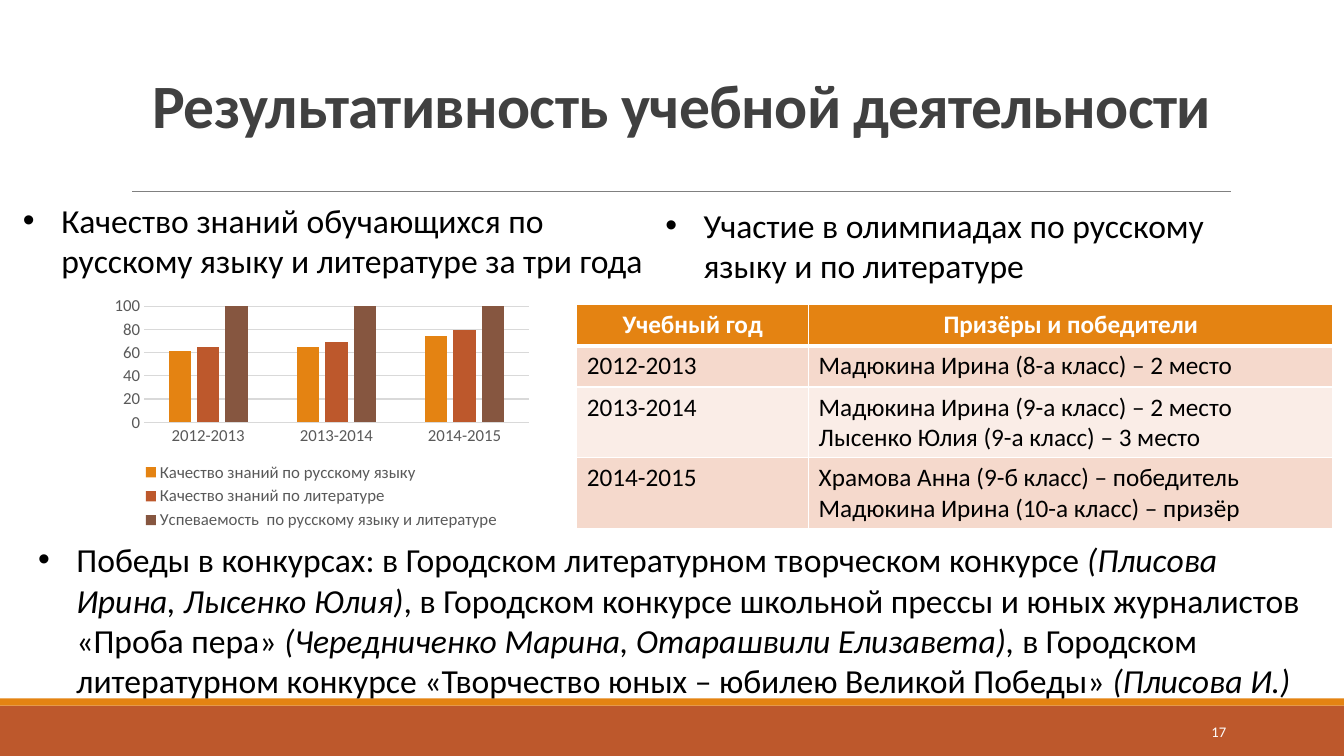
from dataclasses import dataclass

from lxml import etree
from pptx import Presentation
from pptx import util as u
from pptx.chart import data as chart_data
from pptx.dml.color import RGBColor
from pptx.enum import chart as charts, shapes, text
from pptx.oxml import ns

PX = 9144
FONT = "Calibri"
WHITE = RGBColor(0xFF, 0xFF, 0xFF)
BLACK = RGBColor(0x00, 0x00, 0x00)
TITLE_GRAY = RGBColor(0x40, 0x40, 0x40)
LABEL_GRAY = RGBColor(0x59, 0x59, 0x59)
RULE_GRAY = RGBColor(0x80, 0x80, 0x80)
GRID_GRAY = RGBColor(0xD9, 0xD9, 0xD9)
ORANGE = RGBColor(0xE4, 0x83, 0x12)
RUST = RGBColor(0xBD, 0x58, 0x2C)
BROWN = RGBColor(0x86, 0x56, 0x40)
PEACH = RGBColor(0xF5, 0xD9, 0xCC)
PALE_PEACH = RGBColor(0xFA, 0xED, 0xE7)


@dataclass(frozen=True)
class Frame:
    left: int
    top: int
    width: int
    height: int

    def emu(self) -> tuple[int, ...]:
        return tuple(side * PX for side in (self.left, self.top, self.width, self.height))


@dataclass(frozen=True)
class Band:
    frame: Frame
    color: RGBColor


@dataclass(frozen=True)
class Span:
    words: str
    italic: bool = False


@dataclass(frozen=True)
class Bullet:
    frame: Frame
    spans: tuple[Span, ...]


@dataclass(frozen=True)
class Series:
    name: str
    values: tuple[int, ...]
    color: RGBColor


@dataclass(frozen=True)
class Row:
    cells: tuple[str, str]
    height: int
    fill: RGBColor


BANDS = (
    Band(Frame(0, 700, 1333, 50), RUST),
    Band(Frame(0, 693, 1333, 7), ORANGE),
)
BULLETS = (
    Bullet(Frame(13, 193, 663, 91), (
        Span("Качество знаний обучающихся по русскому языку и литературе за три года"),
    )),
    Bullet(Frame(650, 198, 590, 91), (
        Span("Участие в олимпиадах по русскому языку и по литературе"),
    )),
    Bullet(Frame(28, 530, 1287, 172), (
        Span("Победы в конкурсах: в Городском литературном творческом конкурсе "),
        Span("(Плисова Ирина, Лысенко Юлия)", True),
        Span(", в Городском конкурсе школьной прессы и юных журналистов «Проба пера» "),
        Span("(Чередниченко Марина, Отарашвили Елизавета), ", True),
        Span("в Городском литературном конкурсе «Творчество юных – юбилею Великой Победы» "),
        Span("(Плисова И.)", True),
    )),
)
YEARS = ("2012-2013", "2013-2014", "2014-2015")
SERIES = (
    Series("Качество знаний по русскому языку", (61, 65, 74), ORANGE),
    Series("Качество знаний по литературе", (65, 69, 79), RUST),
    Series("Успеваемость  по русскому языку и литературе", (100, 100, 100), BROWN),
)
COLUMN_WIDTHS = (230, 520)
ROWS = (
    Row(("Учебный год", "Призёры и победители"), 41, ORANGE),
    Row((YEARS[0], "Мадюкина Ирина (8-а класс) – 2 место"), 41, PEACH),
    Row((YEARS[1], "Мадюкина Ирина (9-а класс) – 2 место\nЛысенко Юлия (9-а класс) – 3 место"),
        70, PALE_PEACH),
    Row((YEARS[2], "Храмова Анна (9-б класс) – победитель\nМадюкина Ирина (10-а класс) – призёр"),
        70, PEACH),
)


def style_font(font, size: float, color: RGBColor, bold: bool = False, italic: bool = False) -> None:
    font.name = FONT
    font.size = u.Pt(size)
    font.color.rgb = color
    font.bold = bold
    font.italic = italic


def add_band(page, band: Band) -> None:
    bar = page.shapes.add_shape(shapes.MSO_SHAPE.RECTANGLE, *band.frame.emu())
    bar.shadow.inherit = False
    bar.fill.solid()
    bar.fill.fore_color.rgb = band.color
    bar.line.fill.background()


def add_rule(page, left: int, right: int, top: int) -> None:
    rule = page.shapes.add_connector(
        shapes.MSO_CONNECTOR.STRAIGHT, left * PX, top * PX, right * PX, top * PX)
    rule.line.color.rgb = RULE_GRAY
    rule.line.width = u.Pt(0.5)
    etree.SubElement(rule._element.spPr, ns.qn("a:effectLst"))


def add_label(page, frame: Frame, words: str, anchor, align):
    box = page.shapes.add_textbox(*frame.emu())
    box.text_frame.word_wrap = True
    box.text_frame.vertical_anchor = anchor
    box.text_frame.text = words
    para = box.text_frame.paragraphs[0]
    para.alignment = align
    return para


def add_bullet(page, bullet: Bullet) -> None:
    box = page.shapes.add_textbox(*bullet.frame.emu())
    box.text_frame.word_wrap = True
    box.text_frame.auto_size = text.MSO_AUTO_SIZE.SHAPE_TO_FIT_TEXT
    para = box.text_frame.paragraphs[0]
    properties = para._p.get_or_add_pPr()
    properties.set("marL", str(38 * PX))
    properties.set("indent", str(-38 * PX))
    etree.SubElement(properties, ns.qn("a:buFont"), typeface="Arial")
    etree.SubElement(properties, ns.qn("a:buChar"), char="•")
    for span in bullet.spans:
        run = para.add_run()
        run.text = span.words
        style_font(run.font, 24, BLACK, italic=span.italic)


def add_borders(cell, bottom: int) -> None:
    properties = cell._tc.get_or_add_tcPr()
    for place, (side, points) in enumerate((("L", 1), ("R", 1), ("T", 1), ("B", bottom))):
        border = etree.Element(ns.qn(f"a:ln{side}"), w=str(u.Pt(points)))
        fill = etree.SubElement(border, ns.qn("a:solidFill"))
        etree.SubElement(fill, ns.qn("a:srgbClr"), val=str(WHITE))
        properties.insert(place, border)


def add_winners(page, frame: Frame) -> None:
    table = page.shapes.add_table(len(ROWS), len(COLUMN_WIDTHS), *frame.emu()).table
    for column, width in zip(table.columns, COLUMN_WIDTHS):
        column.width = width * PX
    for index, row in enumerate(ROWS):
        header = index == 0
        table.rows[index].height = row.height * PX
        for cell, words in zip(table.rows[index].cells, row.cells):
            cell.text_frame.text = words
            cell.fill.solid()
            cell.fill.fore_color.rgb = row.fill
            add_borders(cell, 3 if header else 1)
            for para in cell.text_frame.paragraphs:
                para.alignment = text.PP_ALIGN.CENTER if header else text.PP_ALIGN.LEFT
                style_font(para.runs[0].font, 18, WHITE if header else BLACK, bold=header)


def add_quality_chart(page, frame: Frame) -> None:
    data = chart_data.CategoryChartData()
    data.categories = YEARS
    for series in SERIES:
        data.add_series(series.name, series.values)
    chart = page.shapes.add_chart(
        charts.XL_CHART_TYPE.COLUMN_CLUSTERED, *frame.emu(), data).chart
    style_font(chart.font, 10, BLACK)
    chart.has_title = False
    chart.has_legend = True
    chart.legend.position = charts.XL_LEGEND_POSITION.BOTTOM
    chart.legend.include_in_layout = False
    for part in (chart.legend, chart.category_axis.tick_labels, chart.value_axis.tick_labels):
        style_font(part.font, 12, LABEL_GRAY)
    for axis in (chart.category_axis, chart.value_axis):
        axis.major_tick_mark = charts.XL_TICK_MARK.NONE
        axis.minor_tick_mark = charts.XL_TICK_MARK.NONE
    chart.value_axis.maximum_scale = 100
    chart.value_axis.minimum_scale = 0
    chart.value_axis.format.line.fill.background()
    for line in (chart.category_axis.format.line, chart.value_axis.major_gridlines.format.line):
        line.color.rgb = GRID_GRAY
        line.width = u.Pt(0.75)
    plot = chart.plots[0]
    plot.gap_width = 219
    plot.overlap = -27
    plot.vary_by_categories = False
    for drawn, series in zip(plot.series, SERIES):
        drawn.format.fill.solid()
        drawn.format.fill.fore_color.rgb = series.color


def main() -> None:
    deck = Presentation()
    deck.slide_width, deck.slide_height = 1333 * PX, 750 * PX
    page = deck.slides.add_slide(deck.slide_layouts[6])
    for band in BANDS:
        add_band(page, band)
    add_rule(page, 131, 1221, 190)
    title = add_label(page, Frame(126, 11, 1100, 134), "Результативность учебной деятельности",
                      text.MSO_ANCHOR.BOTTOM, text.PP_ALIGN.CENTER)
    title.line_spacing = 0.85
    style_font(title.runs[0].font, 44, TITLE_GRAY, bold=True)
    title.runs[0]._r.get_or_add_rPr().set("spc", "-50")
    number = add_label(page, Frame(1083, 706, 143, 40), "17",
                       text.MSO_ANCHOR.MIDDLE, text.PP_ALIGN.RIGHT)
    style_font(number.runs[0].font, 10.5, WHITE)
    for bullet in BULLETS:
        add_bullet(page, bullet)
    add_winners(page, Frame(572, 302, sum(COLUMN_WIDTHS), sum(row.height for row in ROWS)))
    add_quality_chart(page, Frame(105, 289, 428, 241))
    deck.save("out.pptx")


if __name__ == "__main__":
    main()
